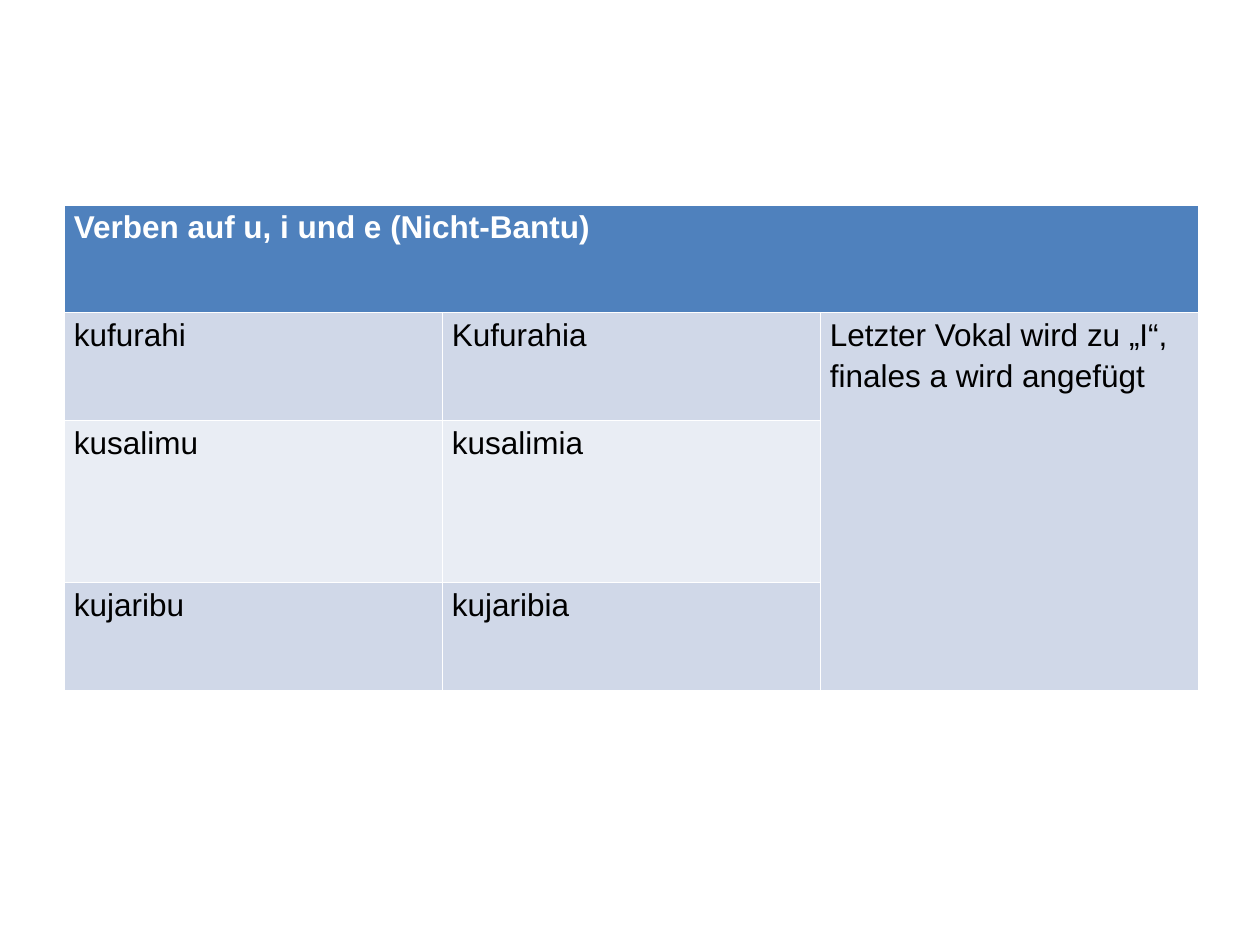
from pptx import Presentation
from pptx import util as u
from pptx.dml.color import RGBColor

WHITE = RGBColor(0xFF, 0xFF, 0xFF)
BLACK = RGBColor(0x00, 0x00, 0x00)
BLUE = RGBColor(0x4F, 0x81, 0xBD)
BAND_DARK = RGBColor(0xD0, 0xD8, 0xE8)
BAND_LIGHT = RGBColor(0xE9, 0xED, 0xF4)

ROWS = [
    ["Verben auf u, i und e (Nicht-Bantu)", "", ""],
    ["kufurahi", "Kufurahia", "Letzter Vokal wird zu „I“, finales a wird angefügt"],
    ["kusalimu", "kusalimia", ""],
    ["kujaribu", "kujaribia", ""],
]
FILLS = [BLUE, BAND_DARK, BAND_LIGHT, BAND_DARK]
HEIGHTS = [61.7, 61.7, 92.5, 61.7]
COL_WIDTH = 216

prs = Presentation()
prs.slide_width, prs.slide_height = u.Pt(720), u.Pt(540)
s = prs.slides.add_slide(prs.slide_layouts[6])

tbl = s.shapes.add_table(len(ROWS), 3, u.Pt(37), u.Pt(117),
                         u.Pt(3 * COL_WIDTH), u.Pt(sum(HEIGHTS))).table
for col in tbl.columns:
    col.width = u.Pt(COL_WIDTH)

for i, row in enumerate(ROWS):
    tbl.rows[i].height = u.Pt(HEIGHTS[i])
    for j, value in enumerate(row):
        cell = tbl.cell(i, j)
        cell.fill.solid()
        cell.fill.fore_color.rgb = BAND_DARK if i and j == 2 else FILLS[i]
        cell.margin_left = cell.margin_right = u.Pt(5.2)
        cell.margin_top = cell.margin_bottom = u.Pt(0)
        if value:
            p = cell.text_frame.paragraphs[0]
            p.line_spacing = 1.15
            r = p.add_run()
            r.text = value
            r.font.name = "Arial"
            r.font.size = u.Pt(18)
            r.font.bold = i == 0
            r.font.color.rgb = BLACK if i else WHITE

tbl.cell(0, 0).merge(tbl.cell(0, 2))
tbl.cell(1, 2).merge(tbl.cell(3, 2))

prs.save("out.pptx")
